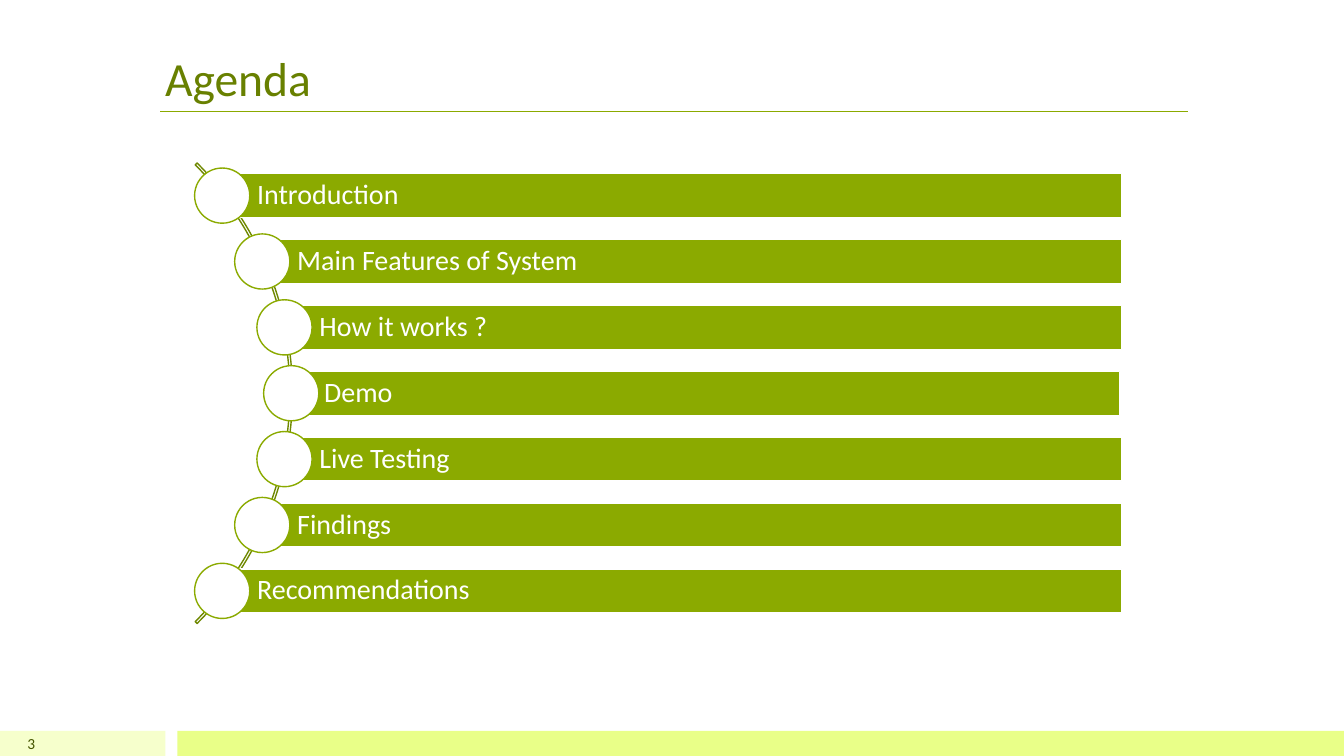
from lxml import etree
from pptx import Presentation
from pptx.dml.color import RGBColor
from pptx.enum.shapes import MSO_CONNECTOR, MSO_SHAPE
from pptx.enum.text import MSO_ANCHOR, PP_ALIGN
from pptx.oxml.ns import qn
from pptx.util import Cm, Pt

COLORS = {
    "white": "FFFFFF",
    "green": "8BAA00",
    "arc": "6F8800",
    "title": "688000",
    "number": "455500",
    "footer_light": "F6FFCC",
    "footer": "E9FF88",
}
FONT = "Calibri"

# Topic, centre of its node, left and right edge of its bar (cm)
AGENDA = [
    ("Introduction", 5.6, 5.6, 28.26),
    ("Main Features of System", 6.61, 6.61, 28.26),
    ("How it works ?", 7.17, 7.17, 28.26),
    ("Demo", 7.34, 7.29, 28.22),
    ("Live Testing", 7.17, 7.17, 28.26),
    ("Findings", 6.61, 6.61, 28.26),
    ("Recommendations", 5.6, 5.6, 28.26),
]
MIDDLE_Y = 9.91
ROW_PITCH = 1.66
BAR_HEIGHT = 1.11
NODE_SIZE = 1.39
ARC_SIZE = 16.41
ARC_LEFT = -9.04
FOOTER_TOP = 18.42
FOOTER_HEIGHT = 0.63


def color(name):
    return RGBColor.from_string(COLORS[name])


def add_preset(slide, preset, left, top, width, height, fill=None, line=None):
    shape = slide.shapes.add_shape(preset, Cm(left), Cm(top), Cm(width), Cm(height))
    shape.shadow.inherit = False
    if fill:
        shape.fill.solid()
        shape.fill.fore_color.rgb = color(fill)
    else:
        shape.fill.background()
    if line:
        shape.line.color.rgb = color(line)
        shape.line.width = Pt(1)
    else:
        shape.line.fill.background()
    return shape


def write_text(shape, text, *, size, ink, align=PP_ALIGN.LEFT,
               anchor=MSO_ANCHOR.MIDDLE, insets=(0.25, 0.13, 0.25, 0.13), spacing=1.0):
    """Fill a shape with one paragraph; insets are left, top, right, bottom in cm."""
    frame = shape.text_frame
    frame.word_wrap = True
    frame.vertical_anchor = anchor
    (frame.margin_left, frame.margin_top,
     frame.margin_right, frame.margin_bottom) = map(Cm, insets)
    paragraph = frame.paragraphs[0]
    paragraph.alignment = align
    paragraph.line_spacing = spacing
    run = paragraph.add_run()
    run.text = text
    run.font.name = FONT
    run.font.size = Pt(size)
    run.font.color.rgb = color(ink)


def add_label(slide, text, left, top, width, height, **text_format):
    label = slide.shapes.add_textbox(Cm(left), Cm(top), Cm(width), Cm(height))
    write_text(label, text, **text_format)


def add_rule(slide, left, right, y):
    rule = slide.shapes.add_connector(
        MSO_CONNECTOR.STRAIGHT, Cm(left), Cm(y), Cm(right), Cm(y))
    rule.line.color.rgb = color("green")
    rule.line.width = Pt(0.5)
    etree.SubElement(rule._element.spPr, qn("a:effectLst"))


def add_arc(slide):
    arc = add_preset(slide, MSO_SHAPE.BLOCK_ARC, ARC_LEFT, MIDDLE_Y - ARC_SIZE / 2,
                     ARC_SIZE, ARC_SIZE, line="arc")
    # Angles of 315 and 45 degrees, then the band thickness
    for index, value in enumerate((189, 27, 0.004)):
        arc.adjustments[index] = value


def add_topic(slide, topic, node_x, bar_left, bar_right, y):
    bar = add_preset(slide, MSO_SHAPE.RECTANGLE, bar_left, y - BAR_HEIGHT / 2,
                     bar_right - bar_left, BAR_HEIGHT, fill="green", line="white")
    write_text(bar, topic, size=20, ink="white", spacing=0.9,
               insets=(0.88, 0.15, 0.15, 0.15))
    add_preset(slide, MSO_SHAPE.OVAL, node_x - NODE_SIZE / 2, y - NODE_SIZE / 2,
               NODE_SIZE, NODE_SIZE, fill="white", line="green")


def main():
    deck = Presentation()
    deck.slide_width, deck.slide_height = Cm(33.87), Cm(19.05)
    slide = deck.slides.add_slide(deck.slide_layouts[6])

    for left, width, fill in ((0, 4.17, "footer_light"), (4.47, 29.4, "footer")):
        add_preset(slide, MSO_SHAPE.RECTANGLE, left, FOOTER_TOP,
                   width, FOOTER_HEIGHT, fill=fill)
    add_rule(slide, 4.04, 29.95, 2.8)
    add_label(slide, "Agenda", 3.91, 0.08, 26.04, 2.72,
              size=34, ink="title", anchor=MSO_ANCHOR.BOTTOM)
    add_label(slide, "3", 0, FOOTER_TOP, 1.14, FOOTER_HEIGHT,
              size=11, ink="number", align=PP_ALIGN.RIGHT)

    add_arc(slide)
    first_y = MIDDLE_Y - ROW_PITCH * (len(AGENDA) - 1) / 2
    for row, (topic, node_x, bar_left, bar_right) in enumerate(AGENDA):
        add_topic(slide, topic, node_x, bar_left, bar_right, first_y + row * ROW_PITCH)

    deck.save("out.pptx")


if __name__ == "__main__":
    main()
